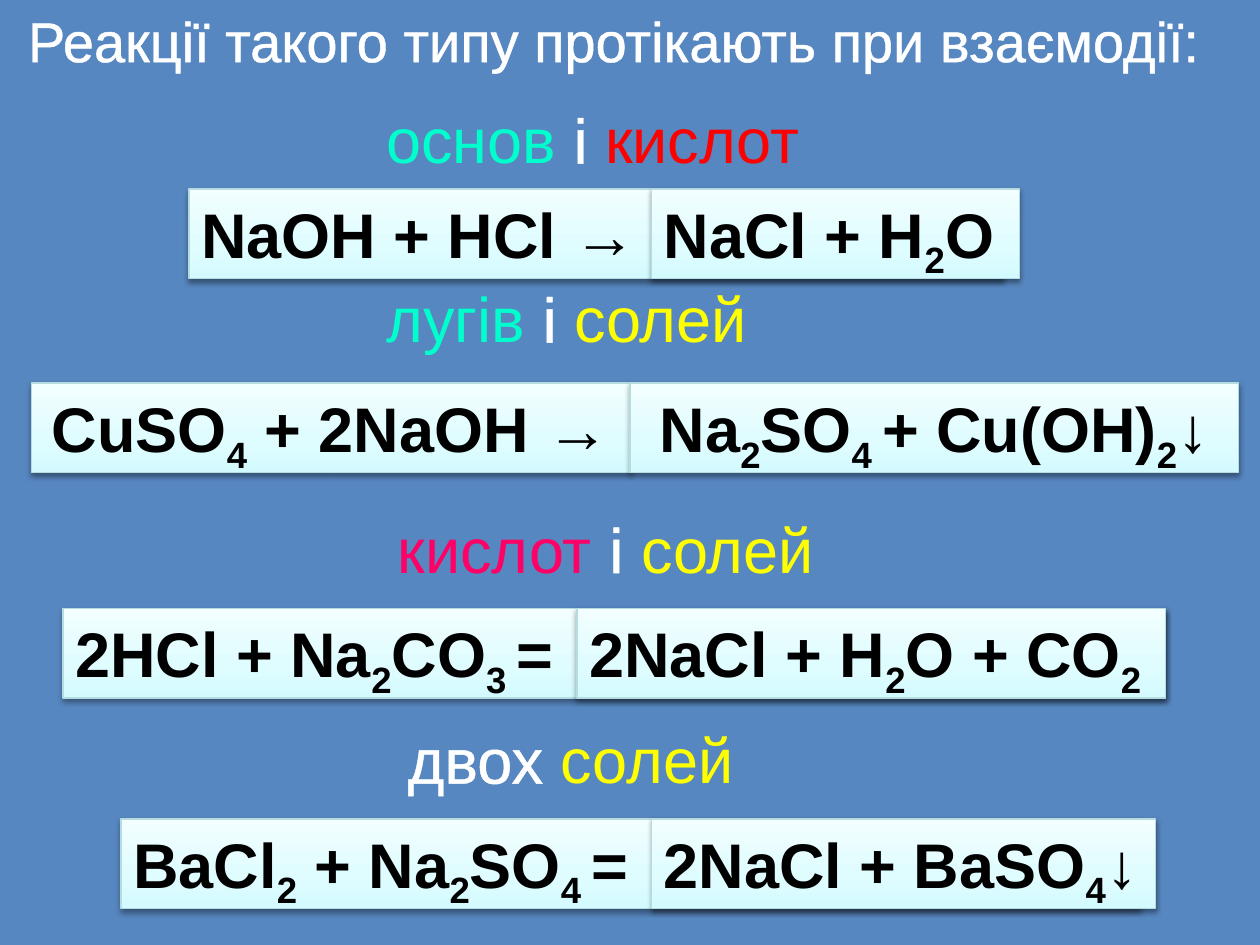
from dataclasses import dataclass

from lxml import etree
from pptx import Presentation
from pptx import util as u
from pptx.dml.color import RGBColor
from pptx.enum import shapes, text
from pptx.oxml import ns


@dataclass(frozen=True)
class Theme:
    font: str = "Arial"
    title_size: int = 32
    body_size: int = 36
    outline_width: float = 1.45
    border_width: float = 0.75
    background: str = "5787C0"
    white: str = "FFFFFF"
    black: str = "000000"
    base: str = "00FFCC"
    acid: str = "FF0000"
    pink_acid: str = "FF0066"
    salt: str = "FFFF00"
    border: str = "B6DCDF"
    gradient: tuple = ((0, "D3FBFF"), (35, "DFFCFF"), (100, "F2FEFF"))


def add_xml(parent, tag, **attributes):
    child = etree.SubElement(parent, ns.qn(tag))
    for name, value in attributes.items():
        child.set(name, str(value))
    return child


class ReactionPage:
    row_height = 0.71

    def __init__(self, deck, theme):
        self.theme = theme
        self.page = deck.slides.add_slide(deck.slide_layouts[6])
        fill = self.page.background.fill
        fill.solid()
        fill.fore_color.rgb = RGBColor.from_string(theme.background)

    def prepare_text(self, box, align=text.PP_ALIGN.LEFT):
        frame = box.text_frame
        frame.word_wrap = True
        frame.auto_size = text.MSO_AUTO_SIZE.SHAPE_TO_FIT_TEXT
        frame.vertical_anchor = text.MSO_ANCHOR.TOP
        para = frame.paragraphs[0]
        para.alignment = align
        return para

    def add_span(self, para, words, size, color, bold=False):
        span = para.add_run()
        span.text = words
        span.font.name = self.theme.font
        span.font.size = u.Pt(size)
        span.font.bold = bold
        span.font.color.rgb = RGBColor.from_string(color)
        return span

    def caption(self, left, top, width, height, size, parts):
        """Text line of (words, colour) parts, each outlined in its colour."""
        box = self.page.shapes.add_textbox(*map(u.Inches, (left, top, width, height)))
        para = self.prepare_text(box)
        for words, color in parts:
            span = self.add_span(para, words, size, color)
            line = etree.Element(ns.qn("a:ln"), w=str(u.Pt(self.theme.outline_width)))
            add_xml(add_xml(line, "a:solidFill"), "a:srgbClr", val=color)
            span.font._element.insert(0, line)

    def formula(self, left, top, width, parts, align):
        """Panel with a formula; every second part is a subscript."""
        box = self.page.shapes.add_shape(
            shapes.MSO_SHAPE.RECTANGLE,
            *map(u.Inches, (left, top, width, self.row_height)))
        self.style_panel(box)
        para = self.prepare_text(box, align)
        for index, words in enumerate(parts):
            span = self.add_span(para, words, self.theme.body_size,
                                 self.theme.black, bold=True)
            if index % 2:
                span.font._element.set("baseline", "-25000")

    def style_panel(self, box):
        theme = self.theme
        box.line.color.rgb = RGBColor.from_string(theme.border)
        box.line.width = u.Pt(theme.border_width)
        # Vertical gradient, lightest at the top
        box.fill.gradient()
        box.fill.gradient_angle = 90
        properties = box._element.spPr
        stops = properties.find(".//" + ns.qn("a:gsLst"))
        for stop in list(stops):
            stops.remove(stop)
        for position, color in theme.gradient:
            stop = add_xml(stops, "a:gs", pos=position * 1000)
            add_xml(stop, "a:srgbClr", val=color)
        # Soft shadow below the panel
        box.shadow.inherit = False
        effects = properties.find(ns.qn("a:effectLst"))
        shadow = add_xml(effects, "a:outerShdw", blurRad=u.Pt(3.1),
                         dist=u.Pt(1.6), dir=5400000, rotWithShape=0)
        color = add_xml(shadow, "a:srgbClr", val=theme.black)
        add_xml(color, "a:alpha", val=38000)


def main():
    deck = Presentation()
    deck.slide_width, deck.slide_height = u.Inches(10), u.Inches(7.5)
    theme = Theme()
    slide = ReactionPage(deck, theme)
    left_align, center = text.PP_ALIGN.LEFT, text.PP_ALIGN.CENTER
    blank, joint = (" ", theme.white), (" і ", theme.white)

    # Kinds of reacting substances: left, top, width, parts
    captions = [
        (2.83, 0.75, 4.33, [blank, ("основ", theme.base), joint, ("кислот", theme.acid)]),
        (2.83, 2.17, 3.83, [blank, ("лугів", theme.base), joint, ("солей", theme.salt)]),
        (2.92, 4, 4.17, [blank, ("кислот", theme.pink_acid), joint, ("солей", theme.salt)]),
        (3, 5.67, 4, [(" двох ", theme.white), ("солей", theme.salt)]),
    ]
    for left, top, width, parts in captions:
        slide.caption(left, top, width, slide.row_height, theme.body_size, parts)

    # Equations: top, alignment, then left, width and parts of each side
    equations = [
        (1.5, left_align,
         (1.5, 6.46, ["NaOH + HCl →"]),
         (5.17, 2.92, ["NaCl + H", "2", "O"])),
        (3.04, center,
         (0.25, 4.75, ["CuSO", "4", " + 2NaOH →"]),
         (5, 4.83, ["Na", "2", "SO", "4 ", "+ Cu(OH)", "2", "↓"])),
        (4.83, left_align,
         (0.5, 8.75, ["2НCl + Na", "2", "СO", "3 ", "="]),
         (4.58, 4.67, ["2NaCl + Н", "2", "O + CО", "2"])),
        (6.5, left_align,
         (0.96, 8.08, ["BaCl", "2", " + Na", "2", "SO", "4 ", "="]),
         (5.17, 4, ["2NaCl + BaSO", "4", "↓"])),
    ]
    for top, align, *sides in equations:
        for left, width, parts in sides:
            slide.formula(left, top, width, parts, align)

    # Title
    slide.caption(0, 0, 9.75, 0.64, theme.title_size,
                  [(" Реакції такого типу протікають при взаємодії:", theme.white)])

    deck.save("out.pptx")


if __name__ == "__main__":
    main()
